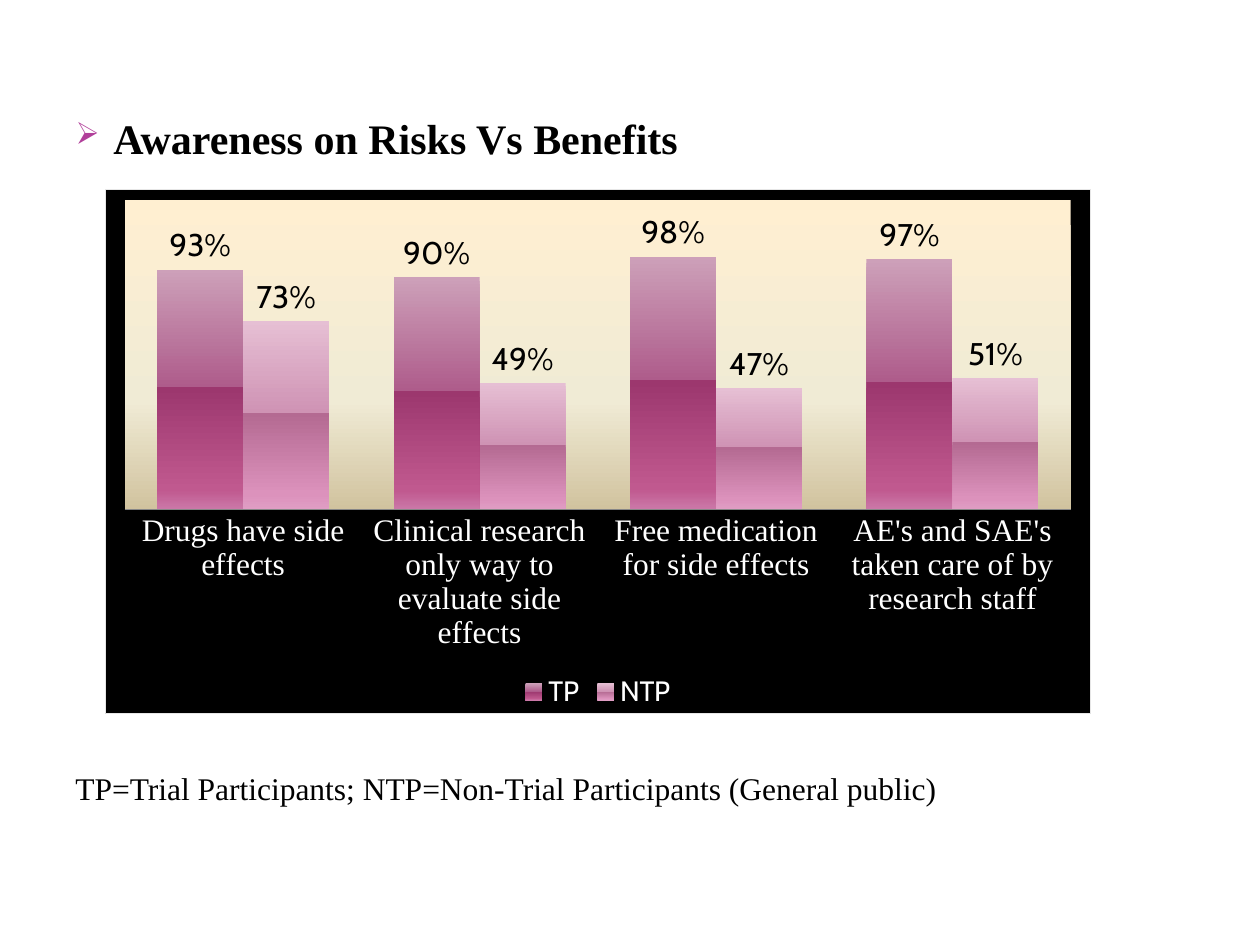
from lxml import etree
from pptx import Presentation
from pptx.chart.data import CategoryChartData
from pptx.dml.color import RGBColor
from pptx.enum.chart import XL_CHART_TYPE, XL_LABEL_POSITION, XL_LEGEND_POSITION, XL_TICK_MARK
from pptx.enum.text import MSO_ANCHOR, MSO_AUTO_SIZE, PP_ALIGN
from pptx.oxml import parse_xml
from pptx.oxml.ns import nsdecls, qn
from pptx.util import Inches, Pt

CLUSTERED = XL_CHART_TYPE.COLUMN_CLUSTERED
OUTSIDE_END = XL_LABEL_POSITION.OUTSIDE_END
LEGEND_BOTTOM = XL_LEGEND_POSITION.BOTTOM
NO_TICKS = XL_TICK_MARK.NONE
MIDDLE = MSO_ANCHOR.MIDDLE
NO_AUTOFIT = MSO_AUTO_SIZE.NONE
LEFT = PP_ALIGN.LEFT

SERIF, SANS = "Times New Roman", "Cabin"
BLACK, WHITE = "000000", "FFFFFF"
QUESTIONS = [
    "Drugs have side effects",
    "Clinical research only way to evaluate side effects",
    "Free medication for side effects",
    "AE's and SAE's taken care of by research staff",
]
AWARENESS = {"TP": (0.93, 0.9, 0.98, 0.97), "NTP": (0.73, 0.49, 0.47, 0.51)}
# Gradient stops from top to bottom: (percent, colour)
BAR_GRADIENTS = {
    "TP": [(0, "CDA0B9"), (49, "AE5C8B"), (49, "9C376E"), (92, "C0598F"), (100, "CB78A8")],
    "NTP": [(0, "E6BFD4"), (49, "CF93B4"), (49, "B46A92"), (92, "DC92BC"), (100, "E09DC4")],
}
PLOT_GRADIENT = [(0, "FFEFD1"), (65, "F0EBD5"), (100, "D1C39F")]


def rgb(hex_colour):
    return RGBColor.from_string(hex_colour)


def style_font(font, size, colour, name, bold=False):
    font.size, font.name, font.bold = Pt(size), name, bold
    font.color.rgb = rgb(colour)


def write_line(shape, text, size, bold=False):
    """Put one left-aligned line in the shape and return its paragraph."""
    frame = shape.text_frame
    frame.word_wrap = True
    frame.auto_size = NO_AUTOFIT
    frame.vertical_anchor = MIDDLE
    paragraph = frame.paragraphs[0]
    paragraph.alignment = LEFT
    run = paragraph.add_run()
    run.text = text
    style_font(run.font, size, BLACK, SERIF, bold)
    return paragraph


def add_arrow_bullet(paragraph):
    properties = paragraph._p.get_or_add_pPr()
    properties.set("marL", str(Inches(0.3)))
    properties.set("indent", str(Inches(-0.3)))
    colour = etree.SubElement(properties, qn("a:buClr"))
    etree.SubElement(colour, qn("a:srgbClr"), val="B13F9A")
    etree.SubElement(properties, qn("a:buSzPct"), val="73000")
    etree.SubElement(properties, qn("a:buChar"), char="➢")


def add_heading(slide):
    heading = slide.shapes.title
    heading.left, heading.top = Inches(0.5), Inches(0.8)
    heading.width, heading.height = Inches(9), Inches(0.58)
    add_arrow_bullet(write_line(heading, "Awareness on Risks Vs Benefits", 24, bold=True))


def add_footnote(slide):
    footnote = slide.shapes.add_textbox(Inches(0.5), Inches(6), Inches(9), Inches(0.5))
    write_line(footnote, "TP=Trial Participants; NTP=Non-Trial Participants (General public)", 18)


def vertical_gradient(stops):
    stop_xml = "".join(
        f'<a:gs pos="{percent * 1000}"><a:srgbClr val="{colour}"/></a:gs>'
        for percent, colour in stops
    )
    return parse_xml(
        f'<a:gradFill {nsdecls("a")} rotWithShape="1"><a:gsLst>{stop_xml}</a:gsLst>'
        '<a:lin ang="5400000" scaled="0"/></a:gradFill>'
    )


def style_backgrounds(chart):
    """Fill the chart and plot areas and fix the inner plot position."""
    chart_space = chart._chartSpace
    chart_space.find(qn("c:chart")).addnext(parse_xml(
        f'<c:spPr {nsdecls("c", "a")}>'
        f'<a:solidFill><a:srgbClr val="{BLACK}"/></a:solidFill>'
        '<a:ln w="9525"><a:solidFill><a:srgbClr val="E6E6E6"/></a:solidFill></a:ln></c:spPr>'
    ))
    plot_area = chart_space.find(".//" + qn("c:plotArea"))
    for layout in plot_area.findall(qn("c:layout")):
        plot_area.remove(layout)
    position = "".join(
        f'<c:{key} val="{share}"/>'
        for key, share in (("x", 0.02), ("y", 0.02), ("w", 0.96), ("h", 0.59))
    )
    plot_area.insert(0, parse_xml(
        f'<c:layout {nsdecls("c")}><c:manualLayout><c:layoutTarget val="inner"/>'
        f'<c:xMode val="edge"/><c:yMode val="edge"/>{position}</c:manualLayout></c:layout>'
    ))
    etree.SubElement(plot_area, qn("c:spPr")).append(vertical_gradient(PLOT_GRADIENT))


def style_series(series):
    series._element.get_or_add_spPr().append(vertical_gradient(BAR_GRADIENTS[series.name]))
    series.invert_if_negative = False
    labels = series.data_labels
    labels.show_value = True
    labels.number_format, labels.number_format_is_linked = "0%", False
    labels.position = OUTSIDE_END
    style_font(labels.font, 18, BLACK, SANS)


def add_awareness_chart(slide):
    data = CategoryChartData(number_format="0%")
    data.categories = QUESTIONS
    for group, shares in AWARENESS.items():
        data.add_series(group, shares)
    chart = slide.shapes.add_chart(
        CLUSTERED, Inches(0.83), Inches(1.5), Inches(7.83), Inches(4.17), data
    ).chart
    style_font(chart.font, 10, BLACK, SANS)
    chart.has_title = False
    style_backgrounds(chart)

    plot = chart.plots[0]
    plot.gap_width, plot.overlap, plot.vary_by_categories = 75, 0, False
    for series in plot.series:
        style_series(series)

    question_axis, share_axis = chart.category_axis, chart.value_axis
    question_axis.major_tick_mark = NO_TICKS
    question_axis.format.line.color.rgb = rgb("868686")
    style_font(question_axis.tick_labels.font, 18, WHITE, SERIF)
    share_axis.minimum_scale, share_axis.maximum_scale = 0, 1.2
    share_axis.has_major_gridlines = False
    share_axis.visible = False

    chart.has_legend = True
    chart.legend.position = LEGEND_BOTTOM
    chart.legend.include_in_layout = False
    style_font(chart.legend.font, 16, WHITE, SANS)


def main():
    presentation = Presentation()
    presentation.slide_width, presentation.slide_height = Inches(10), Inches(7.5)
    slide = presentation.slides.add_slide(presentation.slide_layouts.get_by_name("Title Only"))
    add_heading(slide)
    add_awareness_chart(slide)
    add_footnote(slide)
    presentation.save("out.pptx")


if __name__ == "__main__":
    main()
